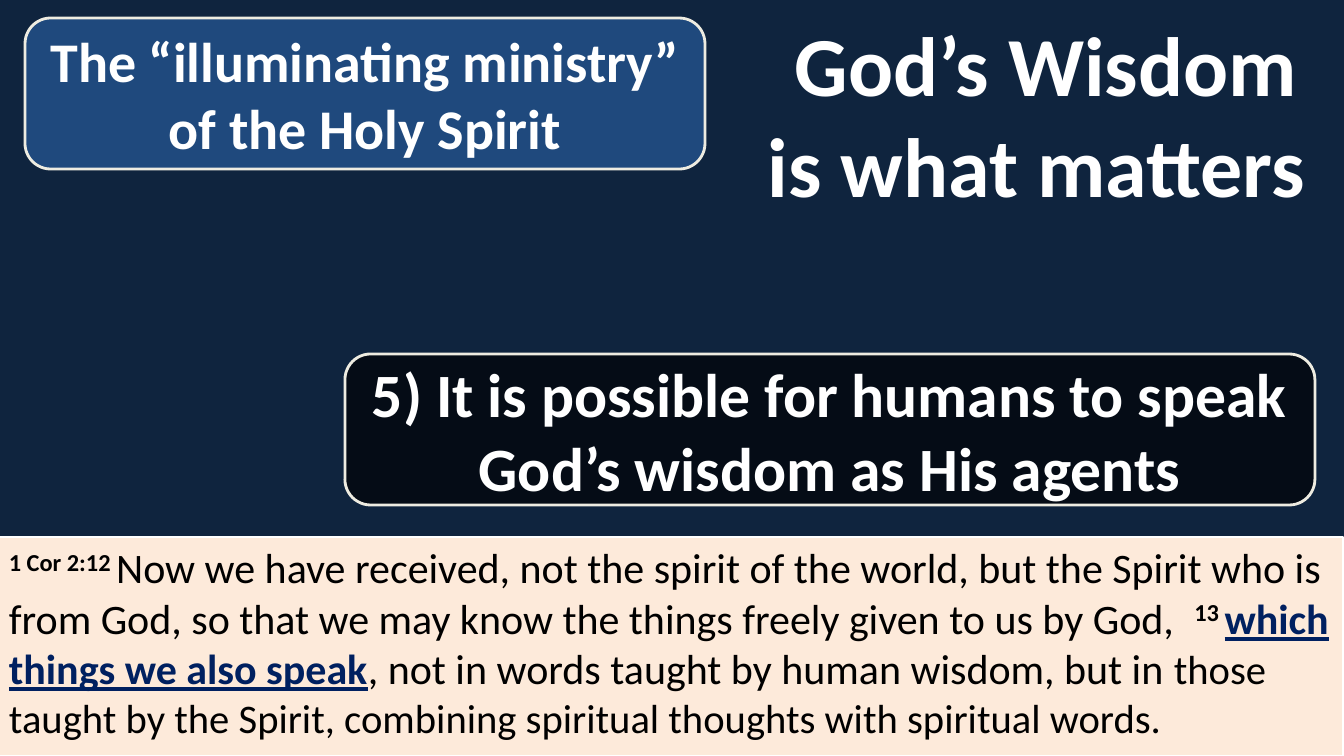
from lxml import etree
from pptx import Presentation
from pptx.dml.color import RGBColor
from pptx.enum.shapes import MSO_SHAPE
from pptx.enum.text import MSO_ANCHOR, MSO_AUTO_SIZE, PP_ALIGN
from pptx.oxml.ns import qn
from pptx.util import Pt

CALLOUT, RECT = MSO_SHAPE.ROUNDED_RECTANGULAR_CALLOUT, MSO_SHAPE.RECTANGLE
CENTER, LEFT = PP_ALIGN.CENTER, PP_ALIGN.LEFT
TOP, MIDDLE = MSO_ANCHOR.TOP, MSO_ANCHOR.MIDDLE
NO_FIT = MSO_AUTO_SIZE.NONE

NIGHT = RGBColor(0x0F, 0x24, 0x3E)
BLUE = RGBColor(0x1F, 0x49, 0x7D)
NAVY = RGBColor(0x00, 0x20, 0x60)
IVORY = RGBColor(0xEE, 0xEC, 0xE1)
PEACH = RGBColor(0xFD, 0xEA, 0xDA)
WHITE = RGBColor(0xFF, 0xFF, 0xFF)
BLACK = RGBColor(0x00, 0x00, 0x00)

FONT = "Calibri"
PX = 914400 / 100.8
SLIDE = (1344, 756)

TITLE = ("God’s Wisdom is what matters ", (756, 8, 580, 210), 60)
CALLOUTS = [
    ("5) It is possible for humans to speak God’s wisdom as His agents",
     (345, 354, 970, 151), 44, BLACK, 64),
    ("The “illuminating ministry” of the Holy Spirit",
     (25, 18, 680, 151), 40, BLUE, 100),
]
CALLOUT_ADJUSTMENTS = (-0.22, 0.5, 0.17)
VERSE_BOX = (-1, 537, 1344, 219)
VERSE = [
    ("1 Cor 2:12 ", 30, "number"),
    ("Now we have received, not the spirit of the world, but the Spirit who is "
     "from God, so that we may know the things freely given to us by God,  ", 30, "plain"),
    ("13 ", 30, "number"),
    ("which things we also speak", 30, "key"),
    (", not in words taught by human wisdom, but in ", 30, "plain"),
    ("those taught by the Spirit, combining spiritual thoughts with "
     "spiritual words.", 29, "plain"),
]


def emu(box):
    """Turn px lengths into EMU."""
    return [round(v * PX) for v in box]


def style_run(r, size, color, bold=True):
    """Set the font of a run."""
    r.font.name, r.font.size, r.font.bold = FONT, Pt(size), bold
    r.font.color.rgb = color


def set_centered(sp, text, size):
    """Write bold white text in the middle of a shape."""
    tf = sp.text_frame
    tf.word_wrap, tf.auto_size, tf.vertical_anchor = True, NO_FIT, MIDDLE
    p = tf.paragraphs[0]
    p.text, p.alignment = text, CENTER
    style_run(p.runs[0], size, WHITE)


def add_box(slide, kind, box, fill, line, width, opacity=100):
    """Add a filled and outlined shape."""
    sp = slide.shapes.add_shape(kind, *emu(box))
    sp.shadow.inherit = False
    sp.fill.solid()
    sp.fill.fore_color.rgb = fill
    sp.line.color.rgb, sp.line.width = line, Pt(width)
    if opacity < 100:
        color = sp.fill._xPr.find(qn("a:solidFill"))[0]
        etree.SubElement(color, qn("a:alpha")).set("val", str(opacity * 1000))
    return sp


def add_verse(slide):
    """Add the scripture panel with its mixed runs."""
    sp = add_box(slide, RECT, VERSE_BOX, PEACH, WHITE, 1.5)
    tf = sp.text_frame
    tf.word_wrap, tf.vertical_anchor = True, TOP
    p = tf.paragraphs[0]
    p.alignment = LEFT
    for text, size, role in VERSE:
        r = p.add_run()
        r.text = text
        style_run(r, size, NAVY if role == "key" else BLACK, role != "plain")
        if role == "key":
            r.font.underline = True
        if role == "number":
            r.font._element.set("baseline", "30000")


def main():
    """Build the slide and save it."""
    prs = Presentation()
    prs.slide_width, prs.slide_height = emu(SLIDE)
    slide = prs.slides.add_slide(prs.slide_layouts[5])
    slide.background.fill.solid()
    slide.background.fill.fore_color.rgb = NIGHT

    text, box, size = TITLE
    title = slide.shapes.title
    title.left, title.top, title.width, title.height = emu(box)
    set_centered(title, text, size)

    for text, box, size, fill, opacity in CALLOUTS:
        sp = add_box(slide, CALLOUT, box, fill, IVORY, 2, opacity)
        for i, value in enumerate(CALLOUT_ADJUSTMENTS):
            sp.adjustments[i] = value
        set_centered(sp, text, size)

    add_verse(slide)
    prs.save("out.pptx")


if __name__ == "__main__":
    main()
